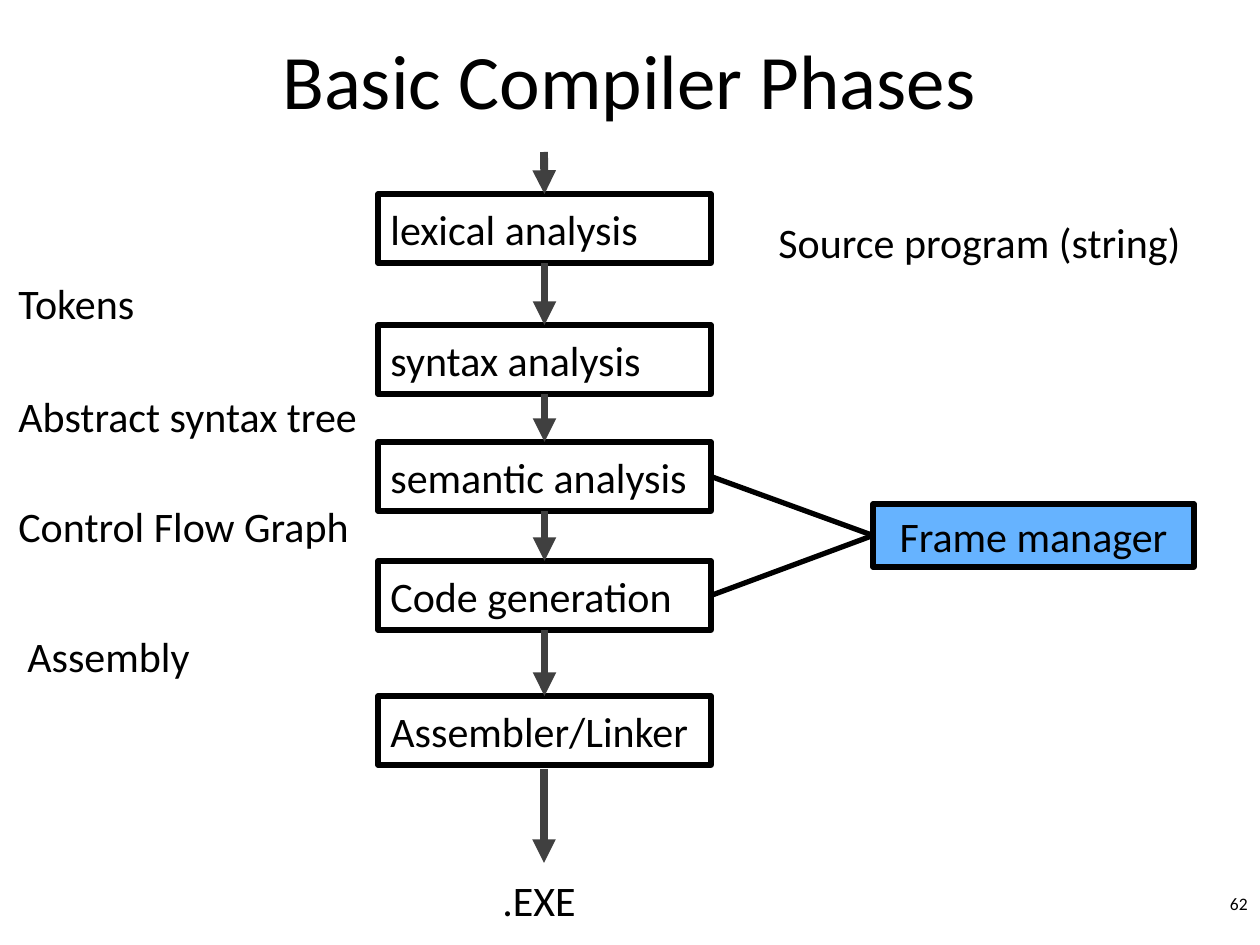
from pptx import Presentation
from pptx.dml.color import RGBColor
from pptx.enum.shapes import MSO_CONNECTOR, MSO_SHAPE
from pptx.enum.text import MSO_ANCHOR, PP_ALIGN
from pptx.oxml.ns import qn
from pptx.util import Emu, Pt
from lxml import etree

PX = 914400 // 126
LEFT, MID, RIGHT = PP_ALIGN.LEFT, PP_ALIGN.CENTER, PP_ALIGN.RIGHT
TOP, CENTER = MSO_ANCHOR.TOP, MSO_ANCHOR.MIDDLE
RECT, LINE = MSO_SHAPE.RECTANGLE, MSO_CONNECTOR.STRAIGHT
BLACK, GREY, BLUE = "000000", "404040", "66B3FF"


def emu(*nums):
    """Turn px lengths into EMU."""
    return [Emu(num * PX) for num in nums]


def paint(part, color):
    """Set the solid colour of a fill or line format."""
    part.solid()
    part.fore_color.rgb = RGBColor.from_string(color)


def write(shape, text, size=24, align=LEFT, anchor=CENTER):
    """Put formatted text into a shape."""
    frame = shape.text_frame
    frame.word_wrap = True
    frame.vertical_anchor = anchor
    para = frame.paragraphs[0]
    para.alignment = align
    run = para.add_run()
    run.text = text
    run.font.name = "Calibri"
    run.font.size = Pt(size)
    paint(run.font.fill, BLACK)


def label(slide, box, text, **form):
    """Add a text box."""
    write(slide.shapes.add_textbox(*emu(*box)), text, **form)


def block(slide, box, text, fill=None, **form):
    """Add a framed rectangle with text."""
    shape = slide.shapes.add_shape(RECT, *emu(*box))
    shape.shadow.inherit = False
    if fill:
        paint(shape.fill, fill)
    else:
        shape.fill.background()
    paint(shape.line.fill, BLACK)
    shape.line.width = Pt(3)
    write(shape, text, **form)
    return shape


def link(slide, ends=(0, 0, 0, 0), start=None, stop=None, color=GREY, width=4.5, arrow=True):
    """Add a line; start and stop are (shape, side) pairs to join."""
    wire = slide.shapes.add_connector(LINE, *emu(*ends))
    if start:
        wire.begin_connect(*start)
    if stop:
        wire.end_connect(*stop)
    paint(wire.line.fill, color)
    wire.line.width = Pt(width)
    if arrow:
        etree.SubElement(wire.line._get_or_add_ln(), qn("a:tailEnd"), type="triangle")
    etree.SubElement(wire._element.spPr, qn("a:effectLst"))


def chain(slide, box):
    """Draw the column of phases with its arrows."""
    left, top, width, high = box
    phases = [
        (0, "lexical analysis"),
        (131, "syntax analysis"),
        (248, "semantic analysis"),
        (367, "Code generation"),
        (502, "Assembler/Linker"),
    ]
    blocks = [block(slide, (left, top + y, width, 69), text) for y, text in phases]
    mid = left + width // 2
    link(slide, (mid, top - 42, mid, top), stop=(blocks[0], 0))
    for prev, follow in zip(blocks, blocks[1:]):
        link(slide, start=(prev, 2), stop=(follow, 0))
    link(slide, (mid, top + high + 4, mid, top + high + 98))
    return blocks


def notes(slide, box):
    """List what each phase hands on, left of the column."""
    left, top, width, high = box
    rows = [(0, 0, "Tokens"), (0, 113, "Abstract syntax tree"),
            (0, 223, "Control Flow Graph"), (9, 353, "Assembly")]
    for x, y, text in rows:
        label(slide, (left + x, top + y, width, 63), text)


def helper(slide, box, users):
    """Draw the frame manager and join it to the phases that use it."""
    frame = block(slide, box, "Frame manager", fill=BLUE, align=MID, anchor=TOP)
    for user in users:
        link(slide, start=(user, 3), stop=(frame, 1), color=BLACK, width=3, arrow=False)


def main():
    """Build and save the slide."""
    deck = Presentation()
    deck.slide_width, deck.slide_height = emu(1260, 945)
    slide = deck.slides.add_slide(deck.slide_layouts[6])
    label(slide, (94, 0, 1071, 158), "Basic Compiler Phases", size=44, align=MID)
    label(slide, (711, 210, 537, 63), "Source program (string)", align=MID)
    label(slide, (316, 868, 446, 63), ".EXE", align=MID)
    label(slide, (998, 887, 262, 38), "62", size=10, align=RIGHT, anchor=TOP)
    notes(slide, (6, 271, 417, 416))
    blocks = chain(slide, (378, 194, 333, 571))
    helper(slide, (873, 504, 321, 63), blocks[2:4])
    deck.save("out.pptx")


if __name__ == "__main__":
    main()
